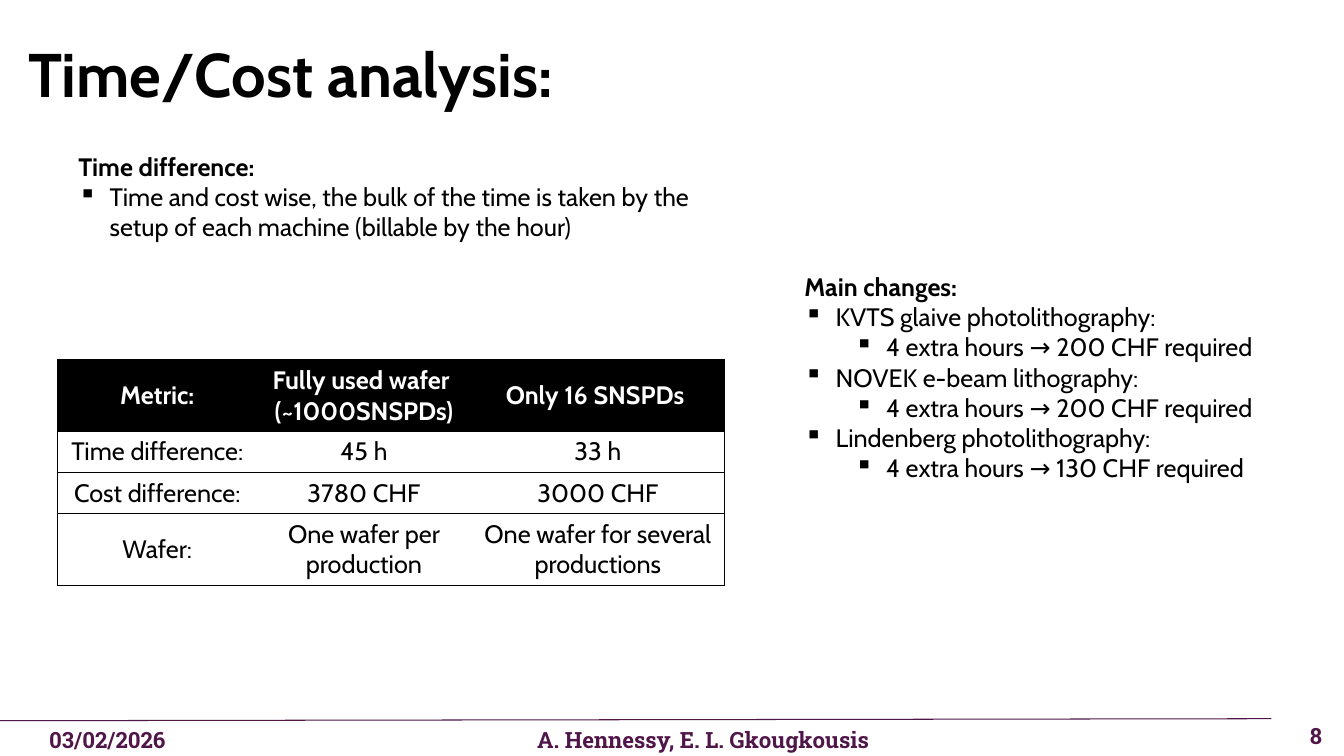
from dataclasses import dataclass

from lxml import etree
from pptx import Presentation
from pptx import util as u
from pptx.dml.color import RGBColor
from pptx.enum import shapes, text
from pptx.oxml import ns

COLOURS = {"black": "000000", "white": "FFFFFF", "plum": "501649"}
BODY_FONT, FOOTER_FONT = "Cabin", "Roboto Slab"
BULLET_INDENTS = {0: 0.31, 1: 0.81}
HANGING = 0.31


@dataclass(frozen=True)
class Line:
    content: str
    level: int | None = None
    bold: bool = False


@dataclass(frozen=True)
class TextBlock:
    left: float
    top: float
    width: float
    height: float
    lines: tuple[Line, ...]
    size: int = 18
    font: str = BODY_FONT
    colour: str = "black"
    align: text.PP_ALIGN = text.PP_ALIGN.LEFT
    anchor: text.MSO_ANCHOR = text.MSO_ANCHOR.TOP


def footer(left: float, top: float, width: float, height: float, content: str) -> TextBlock:
    return TextBlock(left, top, width, height, (Line(content, bold=True),), 16, FOOTER_FONT,
                     "plum", text.PP_ALIGN.RIGHT, text.MSO_ANCHOR.MIDDLE)


def change(process: str, cost: int) -> tuple[Line, Line]:
    return Line(f"{process}:", 0), Line(f"4 extra hours → {cost} CHF required", 1)


TEXT_BLOCKS = (
    TextBlock(0.18, 0, 6.07, 1.45, (Line("Time/Cost analysis:", bold=True),), 44,
              anchor=text.MSO_ANCHOR.MIDDLE),
    TextBlock(0.68, 1.45, 6.4, 1.01, (
        Line("Time difference:", bold=True),
        Line("Time and cost wise, the bulk of the time is taken by the setup of each machine "
             "(billable by the hour)", 0),
    )),
    TextBlock(7.88, 2.64, 5.4, 2.22, (
        Line("Main changes:", bold=True),
        *change("KVTS glaive photolithography", 200),
        *change("NOVEK e-beam lithography", 200),
        *change("Lindenberg photolithography", 130),
    )),
    footer(12.56, 7.14, 0.65, 0.32, "8"),
    footer(4.49, 7.14, 4.23, 0.39, "A. Hennessy, E. L. Gkougkousis"),
    footer(0, 7.2, 1.74, 0.28, "03/02/2026"),
)

COLUMN_WIDTHS = (1.98, 2.12, 2.52)
ROW_HEIGHTS = (0.7, 0.4, 0.41, 0.7)
TABLE_ROWS = (
    ("Metric:", "Fully used wafer \n(~1000SNSPDs)", "Only 16 SNSPDs "),
    ("Time difference:", "45 h", "33 h"),
    ("Cost difference:", "3780 CHF", "3000 CHF"),
    ("Wafer:", "One wafer per production", "One wafer for several productions"),
)


def rgb(name: str) -> RGBColor:
    return RGBColor.from_string(COLOURS[name])


def add_run(paragraph, line: Line, size: int, font: str, colour: str) -> None:
    run = paragraph.add_run()
    run.text = line.content
    run.font.name = font
    run.font.size = u.Pt(size)
    run.font.bold = line.bold
    run.font.color.rgb = rgb(colour)


def add_bullet(paragraph, level: int) -> None:
    paragraph.level = level
    properties = paragraph._p.get_or_add_pPr()
    properties.set("marL", str(u.Inches(BULLET_INDENTS[level])))
    properties.set("indent", str(-u.Inches(HANGING)))
    etree.SubElement(properties, ns.qn("a:buChar"), char="▪")


def fill_frame(frame, lines: tuple[Line, ...], size: int, font: str, colour: str,
               align: text.PP_ALIGN) -> None:
    for index, line in enumerate(lines):
        paragraph = frame.add_paragraph() if index else frame.paragraphs[0]
        paragraph.alignment = align
        if line.level is not None:
            add_bullet(paragraph, line.level)
        add_run(paragraph, line, size, font, colour)


def draw_text(slide, block: TextBlock) -> None:
    shape = slide.shapes.add_textbox(u.Inches(block.left), u.Inches(block.top),
                                     u.Inches(block.width), u.Inches(block.height))
    frame = shape.text_frame
    frame.word_wrap = True
    frame.vertical_anchor = block.anchor
    fill_frame(frame, block.lines, block.size, block.font, block.colour, block.align)


def set_borders(cell, visible: dict[str, bool]) -> None:
    properties = cell._tc.get_or_add_tcPr()
    for position, (side, shown) in enumerate(visible.items()):
        border = etree.Element(ns.qn(f"a:ln{side}"), w=str(u.Pt(1)))
        if shown:
            fill = etree.SubElement(border, ns.qn("a:solidFill"))
            etree.SubElement(fill, ns.qn("a:srgbClr"), val=COLOURS["black"])
        else:
            etree.SubElement(border, ns.qn("a:noFill"))
        properties.insert(position, border)


def draw_table(slide) -> None:
    table = slide.shapes.add_table(
        len(TABLE_ROWS), len(COLUMN_WIDTHS), u.Inches(0.57), u.Inches(3.57),
        u.Inches(sum(COLUMN_WIDTHS)), u.Inches(sum(ROW_HEIGHTS))).table
    table.horz_banding = False
    for column, width in zip(table.columns, COLUMN_WIDTHS):
        column.width = u.Inches(width)
    for row, height in zip(table.rows, ROW_HEIGHTS):
        row.height = u.Inches(height)
    last_column = len(COLUMN_WIDTHS) - 1
    for row_index, contents in enumerate(TABLE_ROWS):
        header = row_index == 0
        for column_index, content in enumerate(contents):
            cell = table.cell(row_index, column_index)
            cell.vertical_anchor = text.MSO_ANCHOR.MIDDLE
            cell.fill.solid()
            cell.fill.fore_color.rgb = rgb("black" if header else "white")
            lines = tuple(Line(part, bold=header) for part in content.split("\n"))
            fill_frame(cell.text_frame, lines, 18, BODY_FONT,
                       "white" if header else "black", text.PP_ALIGN.CENTER)
            set_borders(cell, {"L": column_index == 0, "R": column_index == last_column,
                               "T": True, "B": True})


def draw_footer_rule(slide) -> None:
    rule = slide.shapes.add_connector(shapes.MSO_CONNECTOR.STRAIGHT, u.Inches(12.61),
                                      u.Inches(7.13), u.Inches(0), u.Inches(7.15))
    rule.line.color.rgb = rgb("plum")
    rule.line.width = u.Pt(0.75)
    etree.SubElement(rule._element.spPr, ns.qn("a:effectLst"))


def main() -> None:
    presentation = Presentation()
    presentation.slide_width = u.Inches(13.33)
    presentation.slide_height = u.Inches(7.5)
    slide = presentation.slides.add_slide(presentation.slide_layouts[6])
    draw_table(slide)
    draw_footer_rule(slide)
    for block in TEXT_BLOCKS:
        draw_text(slide, block)
    presentation.save("out.pptx")


if __name__ == "__main__":
    main()
